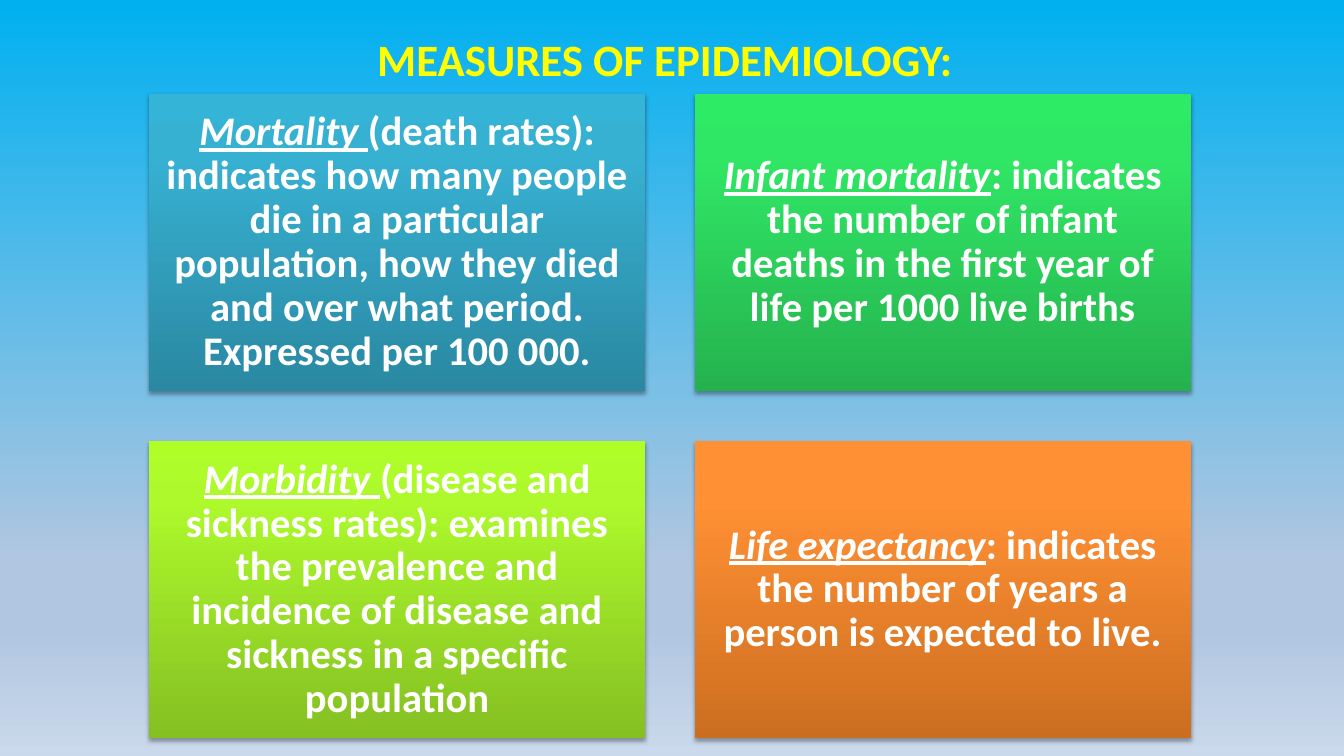
"""Build the slide on measures of epidemiology."""
from dataclasses import dataclass

from lxml import etree
from pptx import Presentation
from pptx.dml.color import RGBColor
from pptx.enum.shapes import MSO_SHAPE
from pptx.enum.text import MSO_ANCHOR, PP_ALIGN
from pptx.oxml.ns import qn
from pptx.util import Cm, Pt

RECT = MSO_SHAPE.RECTANGLE
MIDDLE = MSO_ANCHOR.MIDDLE
CENTER = PP_ALIGN.CENTER
TITLE_ONLY = 5
UPWARD, DOWNWARD = 90, 270


@dataclass(frozen=True)
class Theme:
    font: str = "Calibri"
    title_size: int = 32
    body_size: int = 29
    title_color: str = "FFFF00"
    body_color: str = "FFFFFF"
    shadow_color: str = "000000"
    background: tuple = ((0, "00B0F0"), (74, "B0C6E1"), (83, "B0C6E1"), (100, "CAD9EB"))
    blue: tuple = ((0, "2A88A2"), (80, "37B1D2"), (100, "34B4D6"))
    green: tuple = ((0, "25B24E"), (80, "30E765"), (100, "2DEB64"))
    lime: tuple = ((0, "85C022"), (80, "ADF92C"), (100, "AFFE28"))
    orange: tuple = ((0, "CC6E20"), (80, "FF9034"), (100, "FF9136"))


THEME = Theme()
LEFT, TOP = 3.76, 2.36
CARD_W, CARD_H, GAP = 12.5, 7.5, 1.25
COLUMNS = 2

MEASURES = [
    ("Mortality ", "(death rates): indicates how many people die in a particular "
     "population, how they died and over what period. Expressed per 100 000.", THEME.blue),
    ("Infant mortality", ": indicates the number of infant deaths in the first year "
     "of life per 1000 live births", THEME.green),
    ("Morbidity ", "(disease and sickness rates): examines the prevalence and "
     "incidence of disease and sickness in a specific population", THEME.lime),
    ("Life expectancy", ": indicates the number of years a person is expected to live.",
     THEME.orange),
]


def set_format(obj, values):
    for name, value in values.items():
        setattr(obj, name, value)


def add_color(parent, color):
    return etree.SubElement(parent, qn("a:srgbClr"), val=color)


def set_gradient(fill, element, stops, angle):
    fill.gradient()
    fill.gradient_angle = angle
    stop_list = next(element.iter(qn("a:gsLst")))
    for stop in list(stop_list):
        stop_list.remove(stop)
    for position, color in stops:
        add_color(etree.SubElement(stop_list, qn("a:gs"), pos=str(position * 1000)), color)


def set_shadow(sp):
    sp.shadow.inherit = False
    effects = next(sp.element.iter(qn("a:effectLst")))
    shadow = etree.SubElement(
        effects, qn("a:outerShdw"), blurRad=str(Pt(3.1)), dist=str(Pt(1.8)),
        dir="5400000", rotWithShape="0")
    etree.SubElement(add_color(shadow, THEME.shadow_color), qn("a:alpha"), val="35000")


def add_run(p, text, size, color, **style):
    r = p.add_run()
    r.text = text
    set_format(r.font, {"name": THEME.font, "size": Pt(size), "bold": True, **style})
    r.font.color.rgb = RGBColor.from_string(color)


def set_title(slide, text):
    sp = slide.shapes.title
    set_format(sp, {"left": Cm(5.33), "top": Cm(0.48), "width": Cm(22.86), "height": Cm(1.98)})
    sp.text_frame.vertical_anchor = MIDDLE
    p = sp.text_frame.paragraphs[0]
    p.alignment = CENTER
    add_run(p, text, THEME.title_size, THEME.title_color)


def add_card(slide, index, term, meaning, stops):
    row, column = divmod(index, COLUMNS)
    sp = slide.shapes.add_shape(
        RECT, Cm(LEFT + column * (CARD_W + GAP)), Cm(TOP + row * (CARD_H + GAP)),
        Cm(CARD_W), Cm(CARD_H))
    set_gradient(sp.fill, sp.element, stops, UPWARD)
    sp.line.fill.background()
    set_shadow(sp)
    tf = sp.text_frame
    margins = {f"margin_{side}": Cm(0.3) for side in ("left", "right", "top", "bottom")}
    set_format(tf, {"word_wrap": True, "vertical_anchor": MIDDLE, **margins})
    p = tf.paragraphs[0]
    set_format(p, {"alignment": CENTER, "line_spacing": 0.9})
    add_run(p, term, THEME.body_size, THEME.body_color, italic=True, underline=True)
    add_run(p, meaning, THEME.body_size, THEME.body_color)


def main():
    prs = Presentation()
    set_format(prs, {"slide_width": Cm(33.87), "slide_height": Cm(19.05)})
    slide = prs.slides.add_slide(prs.slide_layouts[TITLE_ONLY])
    set_gradient(slide.background.fill, slide.element, THEME.background, DOWNWARD)
    set_title(slide, "MEASURES OF EPIDEMIOLOGY:")
    for index, measure in enumerate(MEASURES):
        add_card(slide, index, *measure)
    prs.save("out.pptx")


if __name__ == "__main__":
    main()
